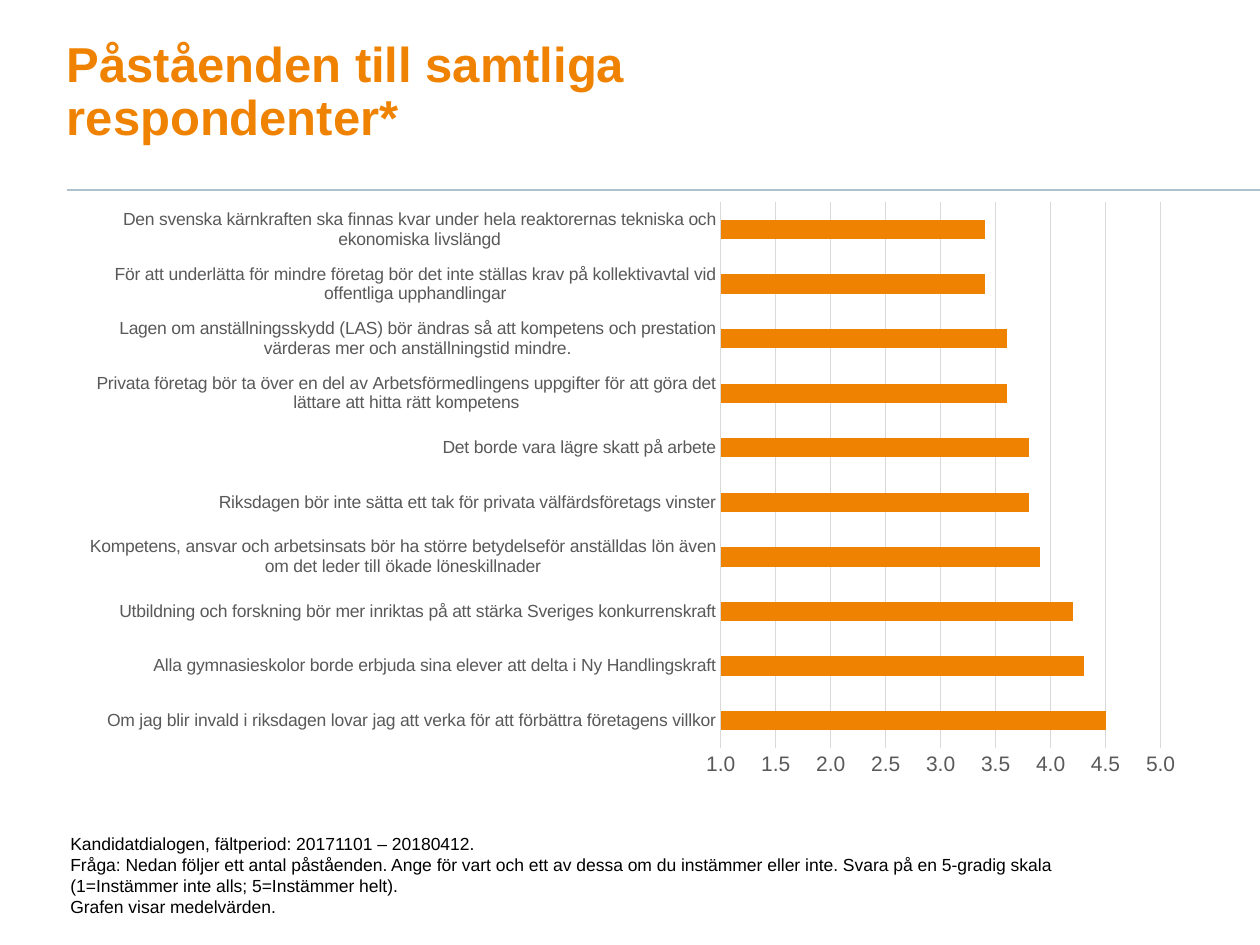
from lxml.etree import SubElement
from pptx import Presentation
from pptx.chart.data import CategoryChartData
from pptx.dml.color import RGBColor
from pptx.enum.chart import XL_CHART_TYPE, XL_TICK_MARK
from pptx.enum.shapes import MSO_CONNECTOR
from pptx.enum.text import MSO_ANCHOR, MSO_AUTO_SIZE, PP_ALIGN
from pptx.oxml.ns import qn
from pptx.util import Inches, Pt

ORANGE = RGBColor(0xEF, 0x82, 0x00)
RULE_BLUE = RGBColor(0xAE, 0xC1, 0xCF)
GRID_GREY = RGBColor(0xD9, 0xD9, 0xD9)
LABEL_GREY = RGBColor(0x59, 0x59, 0x59)
BLACK = RGBColor(0, 0, 0)

SLIDE_WIDTH, SLIDE_HEIGHT = 10, 7.5
MARGIN = 0.53
RULE_TOP = 1.51

TITLE = "Påståenden till samtliga respondenter*"
STATEMENTS = [
    ("Om jag blir invald i riksdagen lovar jag att verka för att förbättra företagens villkor", 4.5),
    ("Alla gymnasieskolor borde erbjuda sina elever att delta i Ny Handlingskraft", 4.3),
    ("Utbildning och forskning bör mer inriktas på att stärka Sveriges konkurrenskraft", 4.2),
    ("Kompetens, ansvar och arbetsinsats bör ha större betydelseför anställdas lön även om det leder till ökade löneskillnader", 3.9),
    ("Riksdagen bör inte sätta ett tak för privata välfärdsföretags vinster", 3.8),
    ("Det borde vara lägre skatt på arbete", 3.8),
    ("Privata företag bör ta över en del av Arbetsförmedlingens uppgifter för att göra det lättare att hitta rätt kompetens", 3.6),
    ("Lagen om anställningsskydd (LAS) bör ändras så att kompetens och prestation värderas mer och anställningstid mindre.", 3.6),
    ("För att underlätta för mindre företag bör det inte ställas krav på kollektivavtal vid offentliga upphandlingar", 3.4),
    ("Den svenska kärnkraften ska finnas kvar under hela reaktorernas tekniska och ekonomiska livslängd", 3.4),
]
NOTES = [
    "Kandidatdialogen, fältperiod: 20171101 – 20180412.",
    "Fråga: Nedan följer ett antal påståenden. Ange för vart och ett av dessa om du instämmer eller inte. "
    "Svara på en 5-gradig skala (1=Instämmer inte alls; 5=Instämmer helt).",
    "Grafen visar medelvärden.",
]


def set_font(font, size, color, bold=False):
    font.name = "Arial"
    font.size = Pt(size)
    font.bold = bold
    font.color.rgb = color


def set_line(line, color, width):
    line.color.rgb = color
    line.width = Pt(width)


def place_title(slide, box):
    title = slide.shapes.title
    title.left, title.top, title.width, title.height = map(Inches, box)
    frame = title.text_frame
    frame.text = TITLE
    frame.word_wrap = True
    frame.auto_size = MSO_AUTO_SIZE.NONE
    frame.vertical_anchor = MSO_ANCHOR.BOTTOM
    frame.margin_left = frame.margin_top = 0
    frame.margin_right, frame.margin_bottom = Inches(0.1), Inches(0.05)
    paragraph = frame.paragraphs[0]
    paragraph.alignment = PP_ALIGN.LEFT
    paragraph.line_spacing = 0.9
    set_font(paragraph.font, 28, ORANGE, bold=True)


def place_rule(slide, left, top, right):
    rule = slide.shapes.add_connector(
        MSO_CONNECTOR.STRAIGHT, Inches(left), Inches(top), Inches(right), Inches(top))
    set_line(rule.line, RULE_BLUE, 1)
    SubElement(rule._element.spPr, qn("a:effectLst"))


def set_plot_layout(chart, **shares):
    plot_area = chart._chartSpace.chart.plotArea
    layout = plot_area.find(qn("c:layout"))
    if layout is None:
        layout = SubElement(plot_area, qn("c:layout"))
        plot_area.insert(0, layout)
    manual = SubElement(layout, qn("c:manualLayout"))
    settings = {"layoutTarget": "inner", "xMode": "edge", "yMode": "edge", **shares}
    for name, value in settings.items():
        SubElement(manual, qn(f"c:{name}")).set("val", str(value))


def place_chart(slide, box):
    data = CategoryChartData(number_format="#,##0.0")
    data.categories = [statement for statement, mean in STATEMENTS]
    data.add_series("Series 1", [mean for statement, mean in STATEMENTS])
    chart = slide.shapes.add_chart(
        XL_CHART_TYPE.BAR_CLUSTERED, *map(Inches, box), data).chart
    chart.has_legend = False
    chart.has_title = False
    set_font(chart.font, 10, BLACK)
    set_plot_layout(chart, x=0.58, y=0.02, w=0.39, h=0.91)

    plot = chart.plots[0]
    plot.vary_by_categories = False
    plot.gap_width = 182
    bars = plot.series[0].format.fill
    bars.solid()
    bars.fore_color.rgb = ORANGE

    for axis, size in ((chart.category_axis, 10), (chart.value_axis, 12)):
        axis.major_tick_mark = axis.minor_tick_mark = XL_TICK_MARK.NONE
        set_font(axis.tick_labels.font, size, LABEL_GREY)
    set_line(chart.category_axis.format.line, GRID_GREY, 0.75)

    value_axis = chart.value_axis
    value_axis.minimum_scale, value_axis.maximum_scale = 1, 5
    value_axis.major_unit = 0.5
    value_axis.tick_labels.number_format = "#,##0.0"
    value_axis.tick_labels.number_format_is_linked = False
    value_axis.format.line.fill.background()
    value_axis.has_major_gridlines = True
    set_line(value_axis.major_gridlines.format.line, GRID_GREY, 0.75)


def place_notes(slide, box):
    frame = slide.shapes.add_textbox(*map(Inches, box)).text_frame
    frame.word_wrap = True
    frame.auto_size = MSO_AUTO_SIZE.SHAPE_TO_FIT_TEXT
    frame.text = "\n".join(NOTES)
    for paragraph in frame.paragraphs:
        set_font(paragraph.font, 10, BLACK)


def main():
    presentation = Presentation()
    presentation.slide_width = Inches(SLIDE_WIDTH)
    presentation.slide_height = Inches(SLIDE_HEIGHT)
    slide = presentation.slides.add_slide(presentation.slide_layouts[5])
    place_rule(slide, MARGIN, RULE_TOP, SLIDE_WIDTH)
    place_title(slide, (MARGIN, 0.31, 7.16, 0.9))
    place_chart(slide, (MARGIN, RULE_TOP, 8.95, 4.76))
    place_notes(slide, (0.46, 6.56, 7.98, 0.77))
    presentation.save("out.pptx")


if __name__ == "__main__":
    main()
